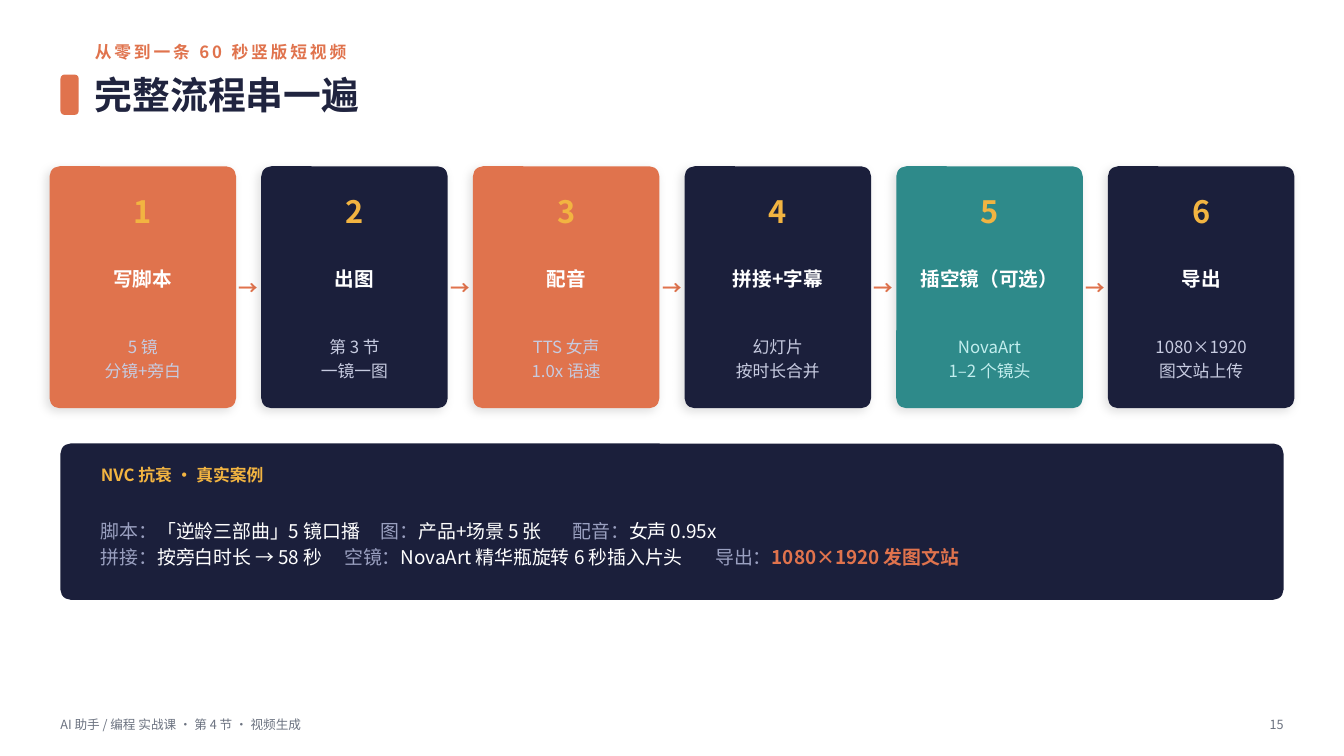
"""Build the slide that runs through the six steps of a short video."""
from dataclasses import dataclass
from typing import NamedTuple, Optional

from lxml import etree
from pptx import Presentation, slide, util as u
from pptx.dml import color
from pptx.enum import shapes, text
from pptx.oxml import ns
from pptx.shapes import autoshape


@dataclass(frozen=True)
class Theme:
    font: str = "Noto Sans CJK SC"
    coral: str = "E0734D"
    navy: str = "1B1F3B"
    teal: str = "2E8A8A"
    gold: str = "F2B441"
    white: str = "FFFFFF"
    heading: str = "20243F"
    mist: str = "C7CBE0"
    mint: str = "C2EEEE"
    label: str = "9AA0C0"
    footer: str = "6B7280"
    title_size: float = 27
    number_size: float = 22
    step_size: float = 14
    case_size: float = 13.5
    detail_size: float = 12
    footer_size: float = 9


THEME = Theme()
LEFT = text.PP_ALIGN.LEFT
CENTER = text.PP_ALIGN.CENTER
RIGHT = text.PP_ALIGN.RIGHT


class Area(NamedTuple):
    left: float
    top: float
    width: float
    height: float


class Span(NamedTuple):
    words: str
    size: float
    colour: str
    bold: bool = False
    tracking: float = 0


class Line(NamedTuple):
    spans: list[Span]
    spacing: Optional[float] = None
    tabs: tuple[float, ...] = ()


class Step(NamedTuple):
    name: str
    details: tuple[str, str]
    fill: str
    detail_colour: str = THEME.mist


STEPS = [
    Step("写脚本", ("5 镜", "分镜+旁白"), THEME.coral),
    Step("出图", ("第 3 节", "一镜一图"), THEME.navy),
    Step("配音", ("TTS 女声", "1.0x 语速"), THEME.coral),
    Step("拼接+字幕", ("幻灯片", "按时长合并"), THEME.navy),
    Step("插空镜（可选）", ("NovaArt", "1–2 个镜头"), THEME.teal, THEME.mint),
    Step("导出", ("1080×1920", "图文站上传"), THEME.navy),
]

PAGE_WIDTH, PAGE_HEIGHT = 960, 540
MARGIN = 43.2
CONTENT_WIDTH = PAGE_WIDTH - 2 * MARGIN
HEADING_LEFT = 67.68
CARD_TOP, CARD_WIDTH, CARD_HEIGHT, CARD_GAP = 118.8, 133.2, 172.8, 18
CARDS_WIDTH = len(STEPS) * (CARD_WIDTH + CARD_GAP) - CARD_GAP
CARDS_LEFT = (PAGE_WIDTH - CARDS_WIDTH) / 2


def add_words(page: slide.Slide, area: Area, lines: list[Line],
              align: text.PP_ALIGN = LEFT) -> None:
    """Add a middle-anchored text box without insets."""
    box = page.shapes.add_textbox(*map(u.Pt, area))
    frame = box.text_frame
    frame.word_wrap = True
    frame.vertical_anchor = text.MSO_ANCHOR.MIDDLE
    frame.margin_left = frame.margin_right = u.Pt(0)
    frame.margin_top = frame.margin_bottom = u.Pt(0)
    for index, line in enumerate(lines):
        para = frame.add_paragraph() if index else frame.paragraphs[0]
        if line.tabs:
            stops = etree.SubElement(para._p.get_or_add_pPr(), ns.qn("a:tabLst"))
            for stop in line.tabs:
                etree.SubElement(stops, ns.qn("a:tab"), pos=str(u.Pt(stop)), algn="l")
        para.alignment = align
        if line.spacing:
            para.line_spacing = line.spacing
        for span in line.spans:
            add_span(para, span)


def add_span(para: "text.text._Paragraph", span: Span) -> None:
    """Add one styled run to a paragraph."""
    run = para.add_run()
    run.text = span.words
    run.font.size = u.Pt(span.size)
    run.font.bold = span.bold
    run.font.color.rgb = color.RGBColor.from_string(span.colour)
    run.font.name = THEME.font
    properties = run._r.get_or_add_rPr()
    etree.SubElement(properties, ns.qn("a:ea"), typeface=THEME.font)
    if span.tracking:
        properties.set("spc", str(round(span.tracking * 100)))


def add_panel(page: slide.Slide, area: Area, fill: str, radius: float) -> autoshape.Shape:
    """Add a flat rounded rectangle with the given corner radius."""
    panel = page.shapes.add_shape(
        shapes.MSO_SHAPE.ROUNDED_RECTANGLE, *map(u.Pt, area))
    panel.adjustments[0] = radius / min(area.width, area.height)
    panel.fill.solid()
    panel.fill.fore_color.rgb = color.RGBColor.from_string(fill)
    panel.line.fill.background()
    panel.shadow.inherit = False
    return panel


def add_soft_shadow(panel: autoshape.Shape) -> None:
    """Give a panel a faint shadow towards the lower left."""
    effects = panel._element.spPr.find(ns.qn("a:effectLst"))
    shadow = etree.SubElement(
        effects, ns.qn("a:outerShdw"), blurRad=str(u.Pt(7)), dist=str(u.Pt(3)),
        dir=str(135 * 60000), algn="bl", rotWithShape="0")
    tint = etree.SubElement(shadow, ns.qn("a:srgbClr"), val="000000")
    etree.SubElement(tint, ns.qn("a:alpha"), val="12000")


def add_step(page: slide.Slide, index: int, step: Step) -> None:
    """Add one numbered card and the arrow to the next one."""
    left = CARDS_LEFT + index * (CARD_WIDTH + CARD_GAP)
    card = Area(left, CARD_TOP, CARD_WIDTH, CARD_HEIGHT)
    add_soft_shadow(add_panel(page, card, step.fill, 7.2))
    number = Span(str(index + 1), THEME.number_size, THEME.gold, True)
    name = Span(step.name, THEME.step_size, THEME.white, True)
    details = [Line([Span(words, THEME.detail_size, step.detail_colour)], 1.15)
               for words in step.details]
    add_words(page, Area(left + 7.2, 133.2, CARD_WIDTH - 14.4, 36), [Line([number])], CENTER)
    add_words(page, Area(left + 3.6, 175, CARD_WIDTH - 7.2, 46.8), [Line([name], 1.1)], CENTER)
    add_words(page, Area(left + 3.6, 228.2, CARD_WIDTH - 7.2, 54), details, CENTER)
    if index < len(STEPS) - 1:
        arrow = Span("→", THEME.step_size, THEME.coral, True)
        add_words(page, Area(left + CARD_WIDTH, CARD_TOP, CARD_GAP, CARD_HEIGHT),
                  [Line([arrow])], CENTER)


def add_heading(page: slide.Slide) -> None:
    """Add the kicker, the accent block and the title."""
    kicker = Span("从零到一条 60 秒竖版短视频", THEME.detail_size, THEME.coral, True, 2)
    title = Span("完整流程串一遍", THEME.title_size, THEME.heading, True)
    add_words(page, Area(HEADING_LEFT, 25.9, 849, 21.6), [Line([kicker])])
    add_panel(page, Area(MARGIN, 53.3, 13, 28.8), THEME.coral, 2.88)
    add_words(page, Area(HEADING_LEFT, 46.1, 849, 43.2), [Line([title])])


def add_case(page: slide.Slide) -> None:
    """Add the panel with the worked example."""
    def label(words: str) -> Span:
        """Return a muted label."""
        return Span(words, THEME.case_size, THEME.label)

    def value(words: str) -> Span:
        """Return a white value."""
        return Span(words, THEME.case_size, THEME.white)

    caption = Span("NVC 抗衰 · 真实案例", THEME.detail_size, THEME.gold, True)
    result = Span("1080×1920 发图文站", THEME.case_size, THEME.coral, True)
    material = [label("脚本："), value("「逆龄三部曲」5 镜口播\t"), label("图："),
                value("产品+场景 5 张\t"), label("配音："), value("女声 0.95x")]
    assembly = [label("拼接："), value("按旁白时长 → 58 秒\t"), label("空镜："),
                value("NovaArt 精华瓶旋转 6 秒插入片头\t"), label("导出："), result]
    add_panel(page, Area(MARGIN, 316.8, CONTENT_WIDTH, 111.6), THEME.navy, 7.2)
    add_words(page, Area(72, 328.3, 288, 21.6), [Line([caption])])
    add_words(page, Area(72, 352.8, 816, 68.4),
              [Line(material, 1.18, (200, 337)), Line(assembly, 1.18, (174, 439))])


def add_footer(page: slide.Slide) -> None:
    """Add the course name and the page number."""
    course = Span("AI 助手 / 编程 实战课 · 第 4 节 · 视频生成", THEME.footer_size, THEME.footer)
    number = Span("15", THEME.footer_size, THEME.footer)
    add_words(page, Area(MARGIN, 506.9, 648, 21.6), [Line([course])])
    add_words(page, Area(PAGE_WIDTH - MARGIN - 50.4, 506.9, 50.4, 21.6), [Line([number])], RIGHT)


def main() -> None:
    """Build and save the deck."""
    deck = Presentation()
    deck.slide_width, deck.slide_height = u.Pt(PAGE_WIDTH), u.Pt(PAGE_HEIGHT)
    page = deck.slides.add_slide(deck.slide_layouts[6])
    add_heading(page)
    for index, step in enumerate(STEPS):
        add_step(page, index, step)
    add_case(page)
    add_footer(page)
    deck.save("out.pptx")


if __name__ == "__main__":
    main()
